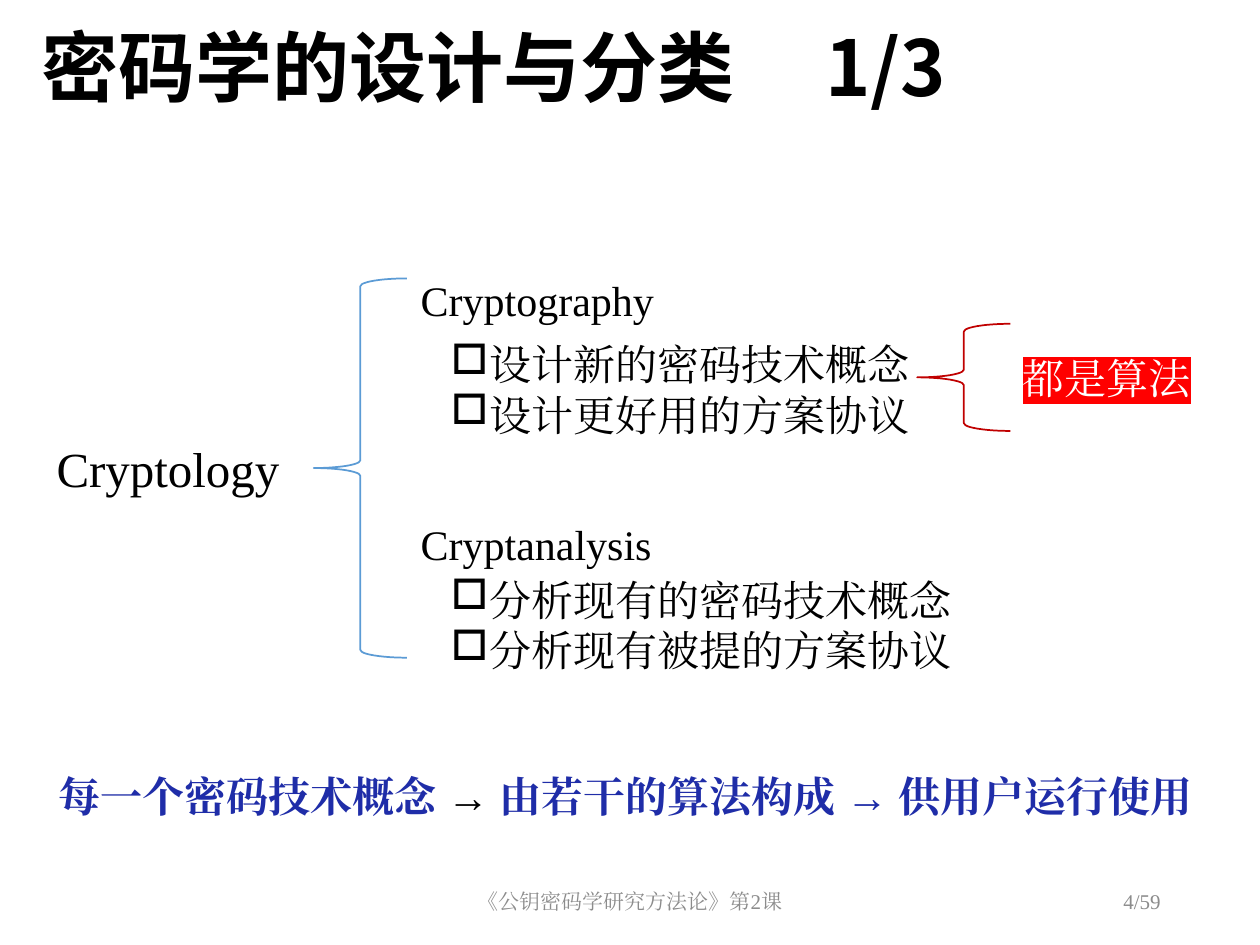
from pptx import Presentation
from pptx import util as u
from pptx.dml.color import RGBColor
from pptx.enum import shapes, text
from pptx.oxml.ns import qn
from lxml import etree

BLACK = RGBColor(0, 0, 0)
WHITE = RGBColor(255, 255, 255)
GRAY = RGBColor(0x8C, 0x8C, 0x8C)
NAVY = RGBColor(0x1F, 0x2D, 0xA8)
BLUE = RGBColor(0x5B, 0x9B, 0xD5)
RED = RGBColor(0xC0, 0, 0)
SERIF = "Times New Roman"
SANS = "Noto Sans CJK SC"
ALIGN = text.PP_ALIGN
TOP = text.MSO_ANCHOR.TOP
MID = text.MSO_ANCHOR.MIDDLE


class Board:
    def __init__(self, slide, font=SERIF, size=24):
        self.slide = slide
        self.font = font
        self.size = size

    def frame(self, area, anchor=TOP):
        box = self.slide.shapes.add_textbox(*map(u.Inches, area))
        frame = box.text_frame
        frame.word_wrap = True
        frame.vertical_anchor = anchor
        return frame

    def run(self, para, words, color=BLACK, size=None, bold=False, font=None):
        run = para.add_run()
        run.text = words
        face = run.font
        face.size = u.Pt(size or self.size)
        face.bold = bold
        face.color.rgb = color
        face.name = font or self.font
        east = etree.SubElement(face._element, qn("a:ea"))
        east.set("typeface", font or self.font)
        return run

    def label(self, area, words, align=ALIGN.LEFT, anchor=TOP, **style):
        para = self.frame(area, anchor).paragraphs[0]
        para.alignment = align
        return self.run(para, words, **style)

    def title(self, area, words, count, stop):
        para = self.frame(area).paragraphs[0]
        tabs = etree.SubElement(para._p.get_or_add_pPr(), qn("a:tabLst"))
        etree.SubElement(tabs, qn("a:tab"), pos=str(u.Inches(stop)), algn="l")
        para.line_spacing = 0.9
        for part in (words + "\t", count):
            self.run(para, part, size=44, bold=True, font=SANS)

    def bullets(self, area, items):
        frame = self.frame(area)
        for i, item in enumerate(items):
            para = frame.add_paragraph() if i else frame.paragraphs[0]
            props = para._p.get_or_add_pPr()
            props.set("marL", str(u.Inches(0.31)))
            props.set("indent", str(u.Inches(-0.31)))
            etree.SubElement(props, qn("a:buChar"), char="□")
            self.run(para, item)

    def brace(self, area, color):
        kind = shapes.MSO_SHAPE.LEFT_BRACE
        brace = self.slide.shapes.add_shape(kind, *map(u.Inches, area))
        brace.shadow.inherit = False
        brace.fill.background()
        brace.line.color.rgb = color
        brace.line.width = u.Pt(1)

    def mark(self, run, color):
        light = etree.Element(qn("a:highlight"))
        etree.SubElement(light, qn("a:srgbClr"), val=str(color))
        run.font._element.find(qn("a:solidFill")).addnext(light)

    def chain(self, area, parts):
        para = self.frame(area).paragraphs[0]
        para.alignment = ALIGN.CENTER
        for words, color, bold in parts:
            self.run(para, words, color, bold=bold)


def main():
    deck = Presentation()
    deck.slide_width = u.Inches(10)
    deck.slide_height = u.Inches(7.5)
    board = Board(deck.slides.add_slide(deck.slide_layouts[6]))

    board.title((0.23, 0.19, 9.57, 0.92), "密码学的设计与分类", "1/3", 6.22)
    board.label((3.31, 6.95, 3.38, 0.4), "《公钥密码学研究方法论》第2课",
                ALIGN.CENTER, MID, color=GRAY, size=12)
    board.label((7.06, 6.95, 2.25, 0.4), "4/59",
                ALIGN.RIGHT, MID, color=GRAY, size=12)

    board.label((0.35, 3.43, 2.45, 0.57), "Cryptology", size=28)
    board.brace((2.49, 2.21, 0.74, 3.01), BLUE)
    fields = (
        ("Cryptography", 2.13, 2.64,
         ("设计新的密码技术概念", "设计更好用的方案协议")),
        ("Cryptanalysis", 4.07, 4.51,
         ("分析现有的密码技术概念", "分析现有被提的方案协议")),
    )
    for name, head, top, items in fields:
        board.label((3.24, head, 2.58, 0.5), name)
        board.bullets((3.48, top, 5, 0.91), items)

    board.brace((7.28, 2.57, 0.74, 0.85), RED)
    note = board.label((8.02, 2.75, 1.78, 0.5), "都是算法", color=WHITE)
    board.mark(note, RGBColor(255, 0, 0))

    board.chain((0.31, 6.07, 9.31, 0.5), (
        ("每一个密码技术概念 ", NAVY, True),
        ("→ ", BLACK, False),
        ("由若干的算法构成 → 供用户运行使用", NAVY, True),
    ))
    deck.save("out.pptx")


if __name__ == "__main__":
    main()
